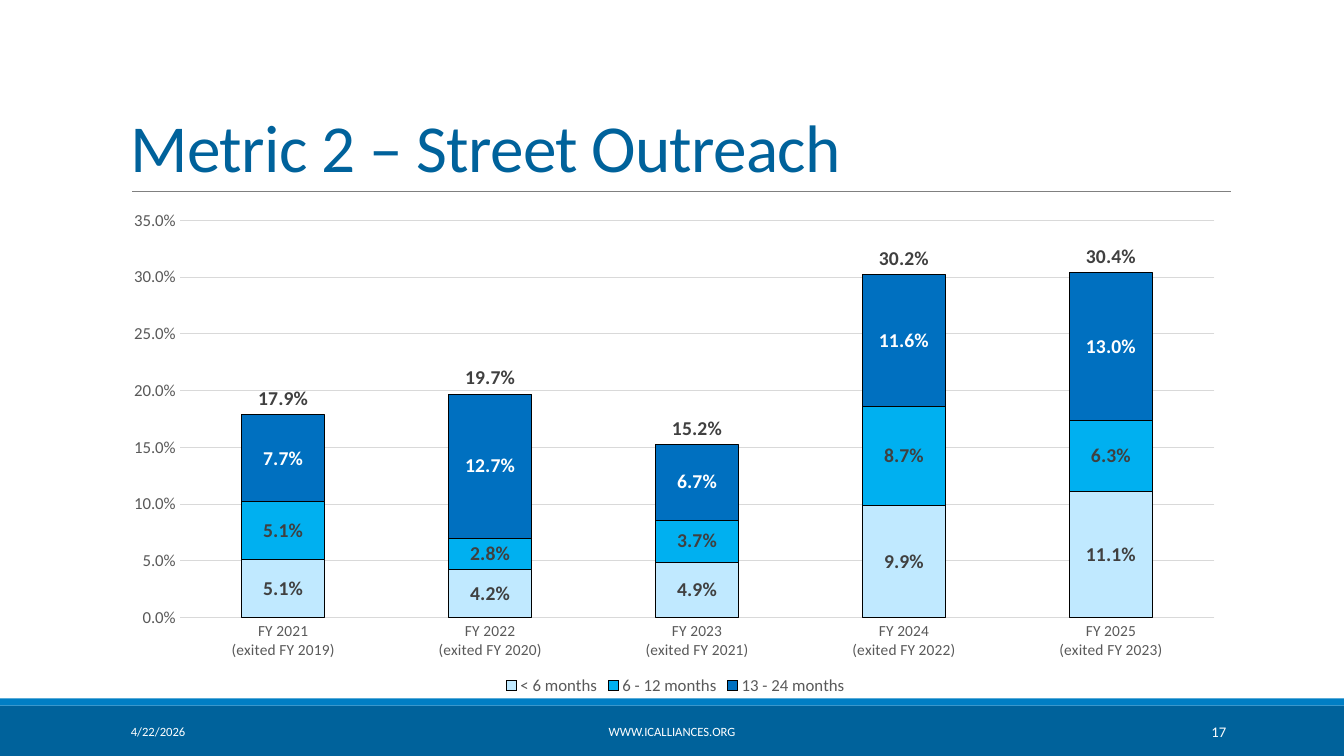
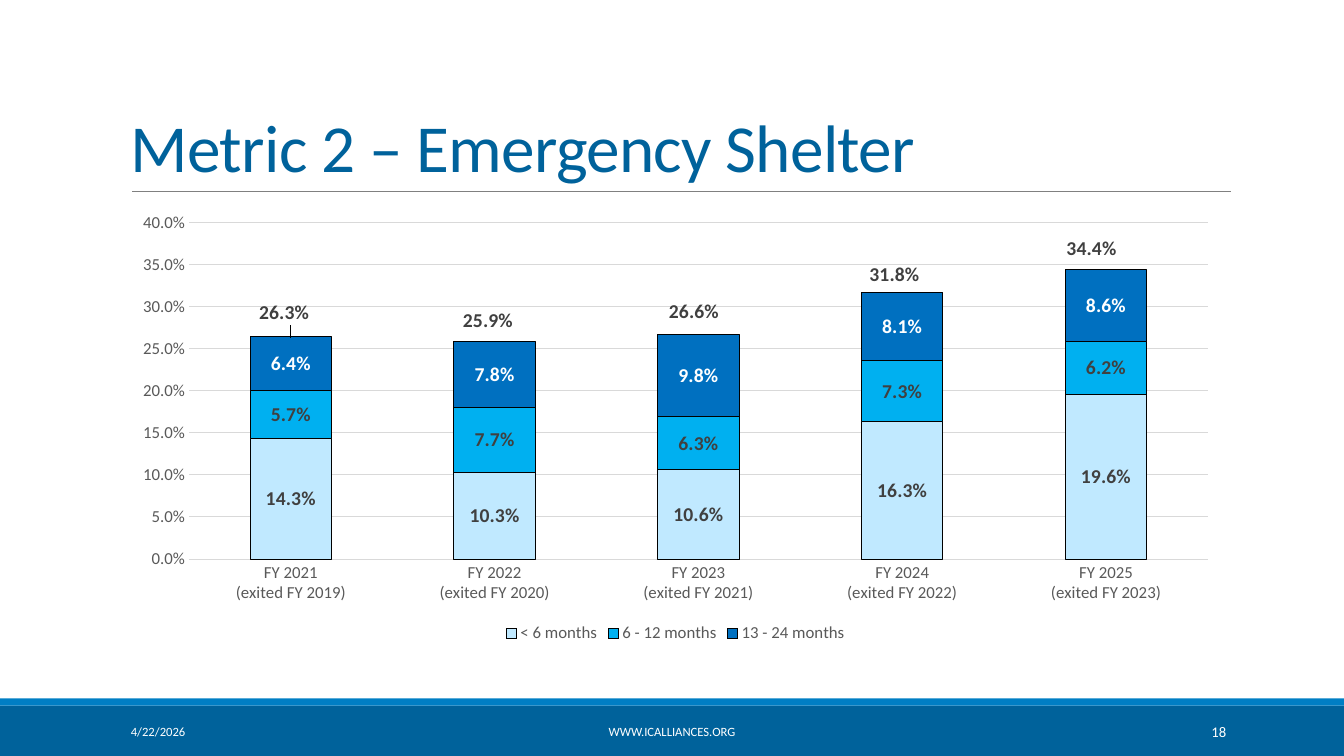
from copy import deepcopy

from lxml import etree
from pptx import Presentation
from pptx.chart.data import CategoryChartData
from pptx.dml.color import RGBColor
from pptx.enum.chart import (XL_CHART_TYPE, XL_LABEL_POSITION, XL_LEGEND_POSITION,
                             XL_MARKER_STYLE, XL_TICK_MARK)
from pptx.enum.shapes import MSO_CONNECTOR, MSO_SHAPE
from pptx.enum.text import MSO_ANCHOR, PP_ALIGN
from pptx.oxml import parse_xml
from pptx.oxml.ns import nsdecls, qn
from pptx.util import Inches, Pt

FONT = "Calibri"
NAVY = RGBColor(0x00, 0x62, 0x9B)
BLUE = RGBColor(0x00, 0x7E, 0xC4)
RULE_GRAY = RGBColor(0x80, 0x80, 0x80)
GRID_GRAY = RGBColor(0xD9, 0xD9, 0xD9)
AXIS_GRAY = RGBColor(0x59, 0x59, 0x59)
LABEL_GRAY = RGBColor(0x40, 0x40, 0x40)
LIGHT_BLUE = RGBColor(0xC0, 0xE9, 0xFF)
SKY_BLUE = RGBColor(0x00, 0xB0, 0xF0)
MID_BLUE = RGBColor(0x00, 0x70, 0xC0)
WHITE = RGBColor(0xFF, 0xFF, 0xFF)
BLACK = RGBColor(0x00, 0x00, 0x00)

PERCENT = "0.0%"
BANDS = [(7, 0.5, NAVY), (6.93, 0.07, BLUE)]
CATEGORIES = [f"FY {year}\n(exited FY {year - 2})" for year in range(2021, 2026)]
# name, fill, label colour
BAR_STYLES = [
    ("< 6 months", LIGHT_BLUE, LABEL_GRAY),
    ("6 - 12 months", SKY_BLUE, LABEL_GRAY),
    ("13 - 24 months", MID_BLUE, WHITE),
]
SLIDES = [
    {
        "title": "Metric 2 – Street Outreach",
        "number": 17,
        "chart_top": 1.9,
        "chart_height": 5.04,
        "category_size": 11,
        "maximum": 0.35,
        "bars": [
            (0.051, 0.042, 0.049, 0.099, 0.111),
            (0.051, 0.028, 0.037, 0.087, 0.063),
            (0.077, 0.127, 0.067, 0.116, 0.13),
        ],
        "totals": (0.179, 0.197, 0.152, 0.302, 0.304),
        "plot_area": {"x": 0.053, "y": 0.057, "w": 0.933, "h": 0.782},
        "label_shifts": [],
    },
    {
        "title": "Metric 2 – Emergency Shelter",
        "number": 18,
        "chart_top": 2.02,
        "chart_height": 4.4,
        "category_size": 12,
        "maximum": 0.4,
        "bars": [
            (0.143, 0.103, 0.106, 0.163, 0.196),
            (0.057, 0.077, 0.063, 0.073, 0.062),
            (0.064, 0.078, 0.098, 0.081, 0.086),
        ],
        "totals": (0.263, 0.259, 0.266, 0.318, 0.344),
        "plot_area": None,
        # fractions of the chart width and height, one pair per total
        "label_shifts": [(-0.006, -0.056), (-0.006, -0.047), (-0.004, -0.052),
                         (-0.007, -0.037), (-0.013, -0.047)],
    },
]


def add_text(slide, text, box, size, color, alignment=PP_ALIGN.LEFT, anchor=MSO_ANCHOR.MIDDLE):
    text_frame = slide.shapes.add_textbox(*map(Inches, box)).text_frame
    text_frame.word_wrap = True
    text_frame.vertical_anchor = anchor
    paragraph = text_frame.paragraphs[0]
    paragraph.alignment = alignment
    run = paragraph.add_run()
    run.text = text
    style_font(run.font, size, color)
    return paragraph


def style_font(font, size, color, bold=False):
    font.name = FONT
    font.size = Pt(size)
    font.bold = bold
    font.color.rgb = color


presentation = Presentation()
presentation.slide_width = Inches(13.33)
presentation.slide_height = Inches(7.5)

for content in SLIDES:
    slide = presentation.slides.add_slide(presentation.slide_layouts[6])

    # Bands, title and rule
    for top, height, color in BANDS:
        band = slide.shapes.add_shape(MSO_SHAPE.RECTANGLE, 0, Inches(top),
                                      presentation.slide_width, Inches(height))
        band.shadow.inherit = False
        band.fill.solid()
        band.fill.fore_color.rgb = color
        band.line.fill.background()

    rule = slide.shapes.add_connector(MSO_CONNECTOR.STRAIGHT, Inches(1.31), Inches(1.9),
                                      Inches(12.21), Inches(1.9))
    rule.line.color.rgb = RULE_GRAY
    rule.line.width = Pt(0.5)
    etree.SubElement(rule._element.spPr, qn("a:effectLst"))

    title = add_text(slide, content["title"], (1.2, 0.31, 11, 1.59), 48, NAVY,
                     anchor=MSO_ANCHOR.BOTTOM)
    title.line_spacing = 0.85
    title.runs[0]._r.get_or_add_rPr().set("spc", "-50")

    # Stacked columns, with the totals as a fourth series
    chart_data = CategoryChartData(number_format=PERCENT)
    chart_data.categories = CATEGORIES
    for (name, _, _), values in zip(BAR_STYLES, content["bars"]):
        chart_data.add_series(name, values)
    chart_data.add_series("Series 4", content["totals"])
    chart = slide.shapes.add_chart(
        XL_CHART_TYPE.COLUMN_STACKED, Inches(1.2), Inches(content["chart_top"]),
        Inches(11), Inches(content["chart_height"]), chart_data).chart
    style_font(chart.font, 10, BLACK)
    chart.has_title = False

    # Axes
    category_axis, value_axis = chart.category_axis, chart.value_axis
    for axis, size in ((category_axis, content["category_size"]), (value_axis, 12)):
        axis.major_tick_mark = axis.minor_tick_mark = XL_TICK_MARK.NONE
        style_font(axis.tick_labels.font, size, AXIS_GRAY)
    value_axis.format.line.fill.background()
    value_axis.minimum_scale = 0
    value_axis.maximum_scale = content["maximum"]
    value_axis.major_unit = 0.05
    value_axis.tick_labels.number_format = PERCENT
    value_axis.tick_labels.number_format_is_linked = False
    for line in (category_axis.format.line, value_axis.major_gridlines.format.line):
        line.color.rgb = GRID_GRAY
        line.width = Pt(0.75)

    # Legend without the totals
    chart.has_legend = True
    chart.legend.position = XL_LEGEND_POSITION.BOTTOM
    chart.legend.include_in_layout = False
    style_font(chart.legend.font, 12, AXIS_GRAY)
    chart.legend._element.find(qn("c:legendPos")).addnext(parse_xml(
        f'<c:legendEntry {nsdecls("c")}><c:idx val="3"/><c:delete val="1"/></c:legendEntry>'))

    # Totals move to a line plot on the same axes
    bar_plot = chart.plots[0]
    bar_plot.gap_width = 150
    bar_plot.overlap = 100
    bar_plot.vary_by_categories = False
    bar_chart = bar_plot._element
    line_chart = parse_xml(
        f'<c:lineChart {nsdecls("c")}><c:grouping val="standard"/><c:varyColors val="0"/>'
        '<c:marker val="1"/></c:lineChart>')
    totals_element = bar_chart.findall(qn("c:ser"))[-1]
    for invert in totals_element.findall(qn("c:invertIfNegative")):
        totals_element.remove(invert)
    line_chart.insert(2, totals_element)
    for axis_id in bar_chart.findall(qn("c:axId")):
        line_chart.append(deepcopy(axis_id))
    bar_chart.addnext(line_chart)

    totals = chart.plots[1].series[0]
    totals.format.line.fill.background()
    totals.marker.style = XL_MARKER_STYLE.NONE
    totals.smooth = False

    for series, (_, fill_color, _) in zip(bar_plot.series, BAR_STYLES):
        series.invert_if_negative = False
        series.format.fill.solid()
        series.format.fill.fore_color.rgb = fill_color
        series.format.line.color.rgb = BLACK
        series.format.line.width = Pt(0.75)

    # Data labels
    label_colors = [style[2] for style in BAR_STYLES] + [LABEL_GRAY]
    for series, color in zip([*bar_plot.series, totals], label_colors):
        labels = series.data_labels
        labels.show_value = True
        labels.number_format = PERCENT
        labels.number_format_is_linked = False
        labels.position = XL_LABEL_POSITION.CENTER
        style_font(labels.font, 14, color, bold=True)

    total_labels = totals.data_labels
    if not content["label_shifts"]:
        total_labels.position = XL_LABEL_POSITION.ABOVE
    shared_settings = list(total_labels._element)
    for index, (shift_x, shift_y) in enumerate(content["label_shifts"]):
        point_label = parse_xml(
            f'<c:dLbl {nsdecls("c")}><c:idx val="{index}"/><c:layout><c:manualLayout>'
            f'<c:x val="{shift_x}"/><c:y val="{shift_y}"/>'
            '</c:manualLayout></c:layout></c:dLbl>')
        point_label.extend(deepcopy(setting) for setting in shared_settings
                           if setting.tag != qn("c:showLeaderLines"))
        total_labels._element.insert(index, point_label)

    if content["plot_area"]:
        plot_area = chart._chartSpace.chart.plotArea
        for layout in plot_area.findall(qn("c:layout")):
            plot_area.remove(layout)
        sizes = "".join(f'<c:{side} val="{value}"/>'
                        for side, value in content["plot_area"].items())
        plot_area.insert(0, parse_xml(
            f'<c:layout {nsdecls("c")}><c:manualLayout><c:layoutTarget val="inner"/>'
            f'<c:xMode val="edge"/><c:yMode val="edge"/>{sizes}</c:manualLayout></c:layout>'))

    # Footer
    add_text(slide, "4/22/2026", (1.2, 7.06, 2.7, 0.4), 9, WHITE)
    add_text(slide, "WWW.ICALLIANCES.ORG", (4.03, 7.06, 5.27, 0.4), 9, WHITE, PP_ALIGN.CENTER)
    add_text(slide, str(content["number"]), (10.83, 7.06, 1.43, 0.4), 10.5, WHITE,
             PP_ALIGN.RIGHT)

presentation.save("out.pptx")
